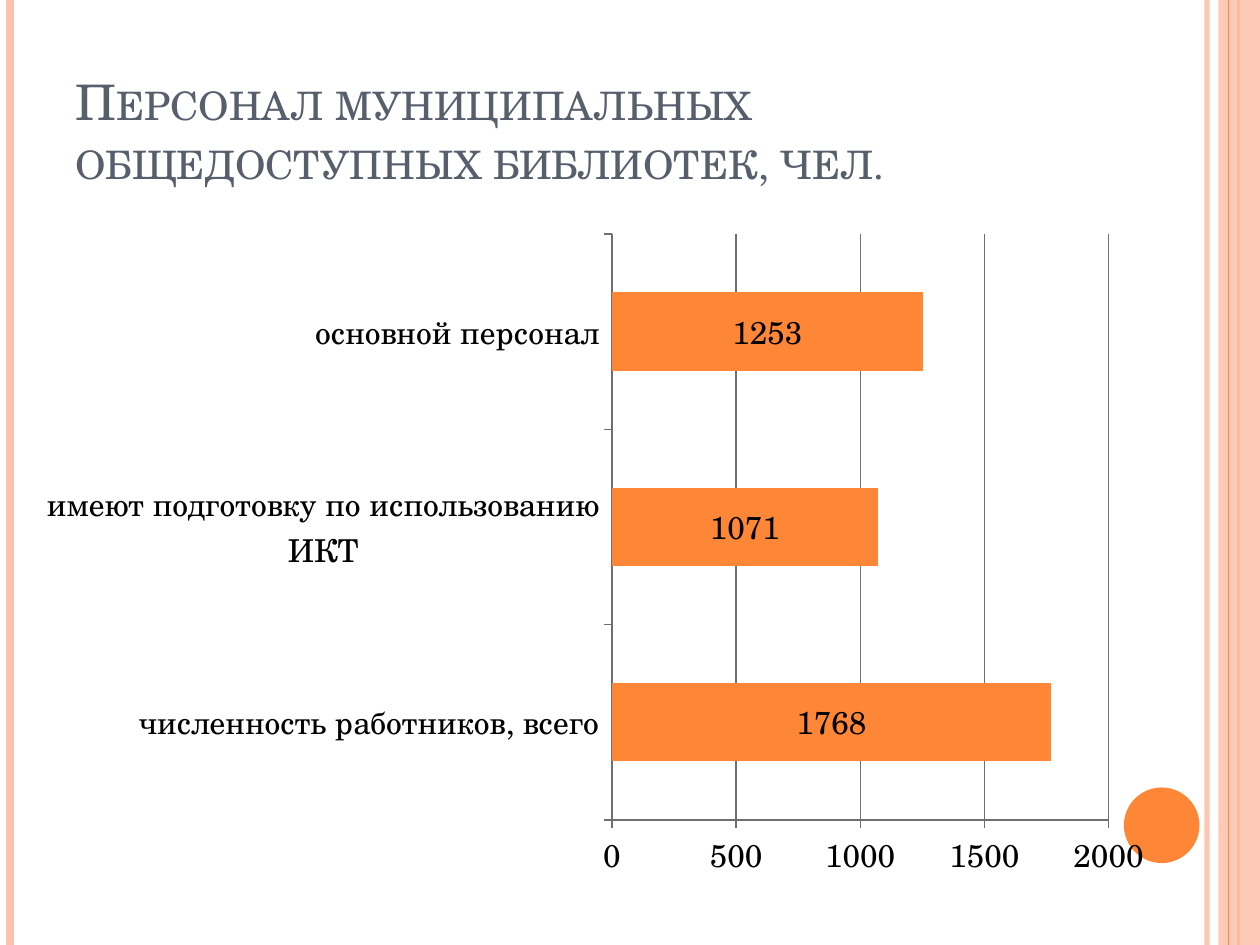
"""Build a slide with a bar chart of municipal library staff."""
import pptx
import pptx.chart.data
import pptx.dml.color
import pptx.enum.chart
import pptx.enum.shapes
import pptx.enum.text
import pptx.oxml
import pptx.oxml.ns
import pptx.util
from lxml import etree

Inches, Pt = pptx.util.Inches, pptx.util.Pt
SHAPE = pptx.enum.shapes.MSO_SHAPE
FONT = "TeX Gyre Schola"
ORANGE, PEACH, SLATE, GRAY = "FE8637", "FEC3AE", "575F6D", "6F6F6F"

TITLE = "Персонал муниципальных общедоступных библиотек, чел."
STAFF = [
    ("численность работников, всего", 1768),
    ("имеют подготовку по использованию ИКТ", 1071),
    ("основной персонал", 1253),
]
BACK_STRIPES = [(9.58, PEACH, 3, 93), (0.08, PEACH, 4.5, 100), (9.83, ORANGE, 1.5, 100)]
FRONT_STRIPES = [(9.75, ORANGE, 0.75, 100)]
PLOT = {"x": 0.514, "y": 0.02, "w": 0.435, "h": 0.873}


def rgb(color):
    return pptx.dml.color.RGBColor.from_string(color)


def add_child(parent, tag, **attrs):
    return etree.SubElement(parent, pptx.oxml.ns.qn(tag), attrs)


def set_alpha(sp, percent):
    clr = next(sp._element.spPr.iter(pptx.oxml.ns.qn("a:srgbClr")))
    add_child(clr, "a:alpha", val=str(percent * 1000))


def add_stripes(s, stripes):
    for x, color, width, alpha in stripes:
        ln = s.shapes.add_connector(
            pptx.enum.shapes.MSO_CONNECTOR.STRAIGHT, Inches(x), 0, Inches(x), Inches(7.5))
        ln.line.color.rgb = rgb(color)
        ln.line.width = Pt(width)
        if alpha < 100:
            set_alpha(ln, alpha)
        add_child(ln._element.spPr, "a:effectLst")


def add_fill_shape(s, kind, box, color):
    sp = s.shapes.add_shape(kind, *map(Inches, box))
    sp.shadow.inherit = False
    sp.fill.solid()
    sp.fill.fore_color.rgb = rgb(color)
    sp.line.fill.background()
    return sp


def add_title(s):
    tf = s.shapes.add_textbox(*map(Inches, (0.5, 0.3, 8.17, 1.25))).text_frame
    tf.word_wrap = True
    tf.vertical_anchor = pptx.enum.text.MSO_ANCHOR.BOTTOM
    r = tf.paragraphs[0].add_run()
    r.text = TITLE
    r.font.size, r.font.name = Pt(28), FONT
    r.font.color.rgb = rgb(SLATE)
    r._r.get_or_add_rPr().set("cap", "small")


def add_staff_chart(s):
    data = pptx.chart.data.CategoryChartData()
    data.categories = [name for name, _ in STAFF]
    data.add_series("Series 1", [count for _, count in STAFF])
    chart = s.shapes.add_chart(
        pptx.enum.chart.XL_CHART_TYPE.BAR_STACKED,
        *map(Inches, (0.2, 1.75, 9.06, 5.33)), data).chart
    chart.has_legend = chart.has_title = False
    chart.font.size, chart.font.name = Pt(18), FONT
    chart.font.color.rgb = rgb("000000")

    plot = chart.plots[0]
    plot.gap_width, plot.overlap, plot.vary_by_categories = 150, 100, False
    plot.has_data_labels = True
    plot.data_labels.show_value = True
    fill = plot.series[0].format.fill
    fill.solid()
    fill.fore_color.rgb = rgb(ORANGE)

    cat, val = chart.category_axis, chart.value_axis
    val.minimum_scale, val.maximum_scale, val.major_unit = 0, 2000, 500
    val.has_major_gridlines = True
    for axis in (cat, val):
        axis.major_tick_mark = pptx.enum.chart.XL_TICK_MARK.OUTSIDE
        axis.format.line.color.rgb = rgb(GRAY)
    val.major_gridlines.format.line.color.rgb = rgb(GRAY)

    area = chart._chartSpace.chart.plotArea
    for old in area.findall(pptx.oxml.ns.qn("c:layout")):
        area.remove(old)
    layout = pptx.oxml.parse_xml(f"<c:layout {pptx.oxml.ns.nsdecls('c')}/>")
    area.insert(0, layout)
    manual = add_child(layout, "c:manualLayout")
    add_child(manual, "c:layoutTarget", val="inner")
    for side in "xy":
        add_child(manual, f"c:{side}Mode", val="edge")
    for side, share in PLOT.items():
        add_child(manual, f"c:{side}", val=str(share))


def main():
    prs = pptx.Presentation()
    prs.slide_width, prs.slide_height = Inches(10), Inches(7.5)
    s = prs.slides.add_slide(prs.slide_layouts[6])
    add_stripes(s, BACK_STRIPES)
    set_alpha(add_fill_shape(s, SHAPE.RECTANGLE, (9.67, 0, 0.33, 7.5), PEACH), 87)
    add_stripes(s, FRONT_STRIPES)
    add_fill_shape(s, SHAPE.OVAL, (8.92, 6.25, 0.6, 0.6), ORANGE)
    add_title(s)
    add_staff_chart(s)
    prs.save("out.pptx")


if __name__ == "__main__":
    main()
